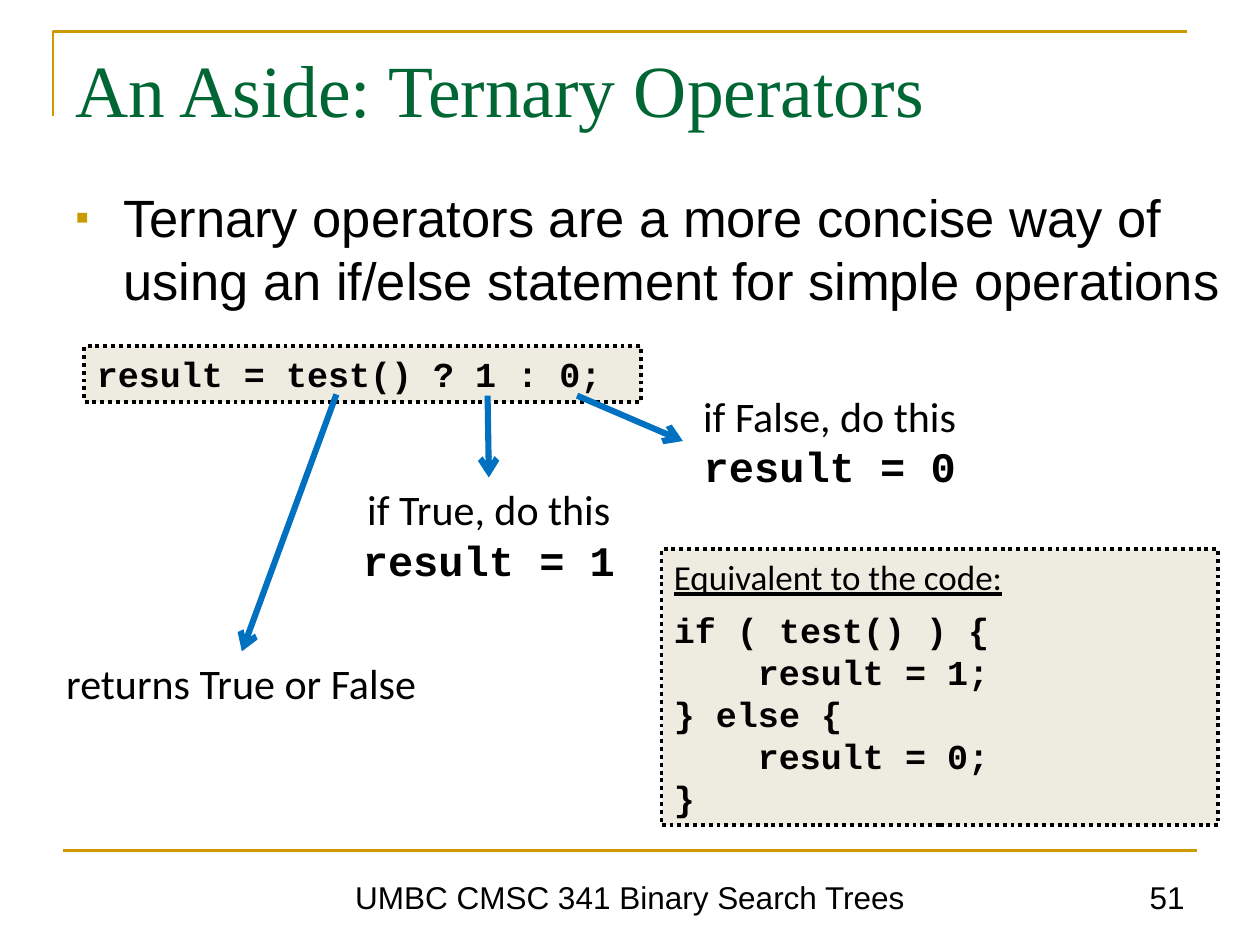
from lxml import etree
from pptx import Presentation
from pptx import util as u
from pptx.dml.color import RGBColor
from pptx.enum import dml, shapes, text
from pptx.oxml.ns import qn

COLORS = {"gold": "CC9900", "green": "006633", "black": "000000",
          "sand": "EEECE1", "blue": "0070C0"}
SANS, CODE, LABEL = "Arial", "Courier New", "Calibri"

TITLE = "An Aside: Ternary Operators"
POINT = ("Ternary operators are a more concise way of using an if/else "
         "statement for simple operations")
FOOTER = [
    ("UMBC CMSC 341 Binary Search Trees", (1.75, 6.83, 6.5, 0.49), "CENTER"),
    ("51", (7.17, 6.83, 2.33, 0.49), "RIGHT"),
]
TERNARY = "result = test() ? 1 : 0;"
EQUIVALENT = [("if ( test() ) {", 0), ("result = 1;", 1), ("} else {", 0),
              ("result = 0;", 1), ("}", 0)]
OUTCOMES = [
    ("returns True or False", None, (0.25, 5.17, 3.33, 0.5)),
    ("if True, do this", "result = 1", (2.63, 3.79, 2.5, 0.91)),
    ("if False, do this", "result = 0", (5.42, 3.05, 2.33, 0.91)),
]
ARROWS = [(2.67, 3.13, 1.92, 5.17), (3.87, 3.14, 3.88, 3.79),
          (4.58, 3.14, 5.42, 3.5)]
CODE_INDENT = 4 * 0.6 * 20

deck = Presentation()
deck.slide_width, deck.slide_height = u.Inches(10), u.Inches(7.5)
slide = deck.slides.add_slide(deck.slide_layouts[6])


def inches(values):
    return [u.Inches(v) for v in values]


def rgb(name):
    return RGBColor.from_string(COLORS[name])


def write(paragraph, words, font=SANS, size=18, color="black", bold=False,
          underline=False, align="LEFT", before=0):
    paragraph.alignment = text.PP_ALIGN[align]
    paragraph.space_before = u.Pt(before)
    run = paragraph.add_run()
    run.text = words
    run.font.name, run.font.size = font, u.Pt(size)
    run.font.bold, run.font.underline = bold, underline
    run.font.color.rgb = rgb(color)
    return paragraph


def text_area(box, anchor="TOP"):
    frame = slide.shapes.add_textbox(*inches(box)).text_frame
    frame.word_wrap = True
    frame.vertical_anchor = text.MSO_ANCHOR[anchor]
    return frame


def code_panel(box):
    panel = slide.shapes.add_shape(shapes.MSO_SHAPE.RECTANGLE, *inches(box))
    panel.shadow.inherit = False
    panel.fill.solid()
    panel.fill.fore_color.rgb = rgb("sand")
    panel.line.color.rgb = rgb("black")
    panel.line.width = u.Pt(2.25)
    panel.line.dash_style = dml.MSO_LINE.ROUND_DOT
    panel.text_frame.word_wrap = True
    panel.text_frame.vertical_anchor = text.MSO_ANCHOR.TOP
    return panel.text_frame


def rule(ends, color, width, arrow=False):
    line = slide.shapes.add_connector(shapes.MSO_CONNECTOR.STRAIGHT, *inches(ends))
    line.line.color.rgb = rgb(color)
    line.line.width = u.Pt(width)
    if arrow:
        etree.SubElement(line.line._get_or_add_ln(), qn("a:tailEnd"), type="arrow")
    etree.SubElement(line._element.spPr, qn("a:effectLst"))


def add_bullet(paragraph, mark, color, hang):
    props = paragraph._p.get_or_add_pPr()
    props.set("marL", str(u.Inches(hang)))
    props.set("indent", str(-u.Inches(hang)))
    tint = etree.SubElement(props, qn("a:buClr"))
    etree.SubElement(tint, qn("a:srgbClr"), val=COLORS[color])
    etree.SubElement(props, qn("a:buSzPct"), val="75000")
    etree.SubElement(props, qn("a:buFont"), typeface=SANS)
    etree.SubElement(props, qn("a:buChar"), char=mark)


outline = slide.shapes.build_freeform(u.Inches(0.42), u.Inches(0.92))
outline.add_line_segments([inches((0.42, 0.25)), inches((9.42, 0.25))], close=False)
corner = outline.convert_to_shape()
corner.shadow.inherit = False
corner.fill.background()
corner.line.color.rgb = rgb("gold")
corner.line.width = u.Pt(1.5)
rule((0.5, 6.75, 9.5, 6.75), "gold", 1.5)

write(text_area((0.5, 0.3, 8.99, 1.11)).paragraphs[0], TITLE,
      font="Times New Roman", size=42, color="green")
point = write(text_area((0.5, 1.42, 9.33, 5.28)).paragraphs[0], POINT,
              size=30, before=7.5)
add_bullet(point, "▪", "gold", 0.38)
for words, box, align in FOOTER:
    write(text_area(box, "BOTTOM").paragraphs[0], words, align=align)

write(code_panel((0.67, 2.75, 4.42, 0.44)).paragraphs[0], TERNARY,
      font=CODE, size=20, bold=True)
equivalent = code_panel((5.25, 4.36, 4.42, 2.19))
write(equivalent.paragraphs[0], "Equivalent to the code:", font=LABEL, size=20,
      underline=True, before=6)
for row, (words, depth) in enumerate(EQUIVALENT):
    code_line = write(equivalent.add_paragraph(), words, font=CODE, size=20,
                      bold=True, before=0 if row else 6)
    code_line._p.get_or_add_pPr().set("marL", str(u.Pt(depth * CODE_INDENT)))

for label, result, box in OUTCOMES:
    outcome = text_area(box).paragraphs[0]
    write(outcome, label, font=LABEL, size=24, align="CENTER")
    if result:
        outcome.add_line_break()
        write(outcome, result, font=CODE, size=24, bold=True, align="CENTER")
for ends in ARROWS:
    rule(ends, "blue", 3.5, arrow=True)

deck.save("out.pptx")
